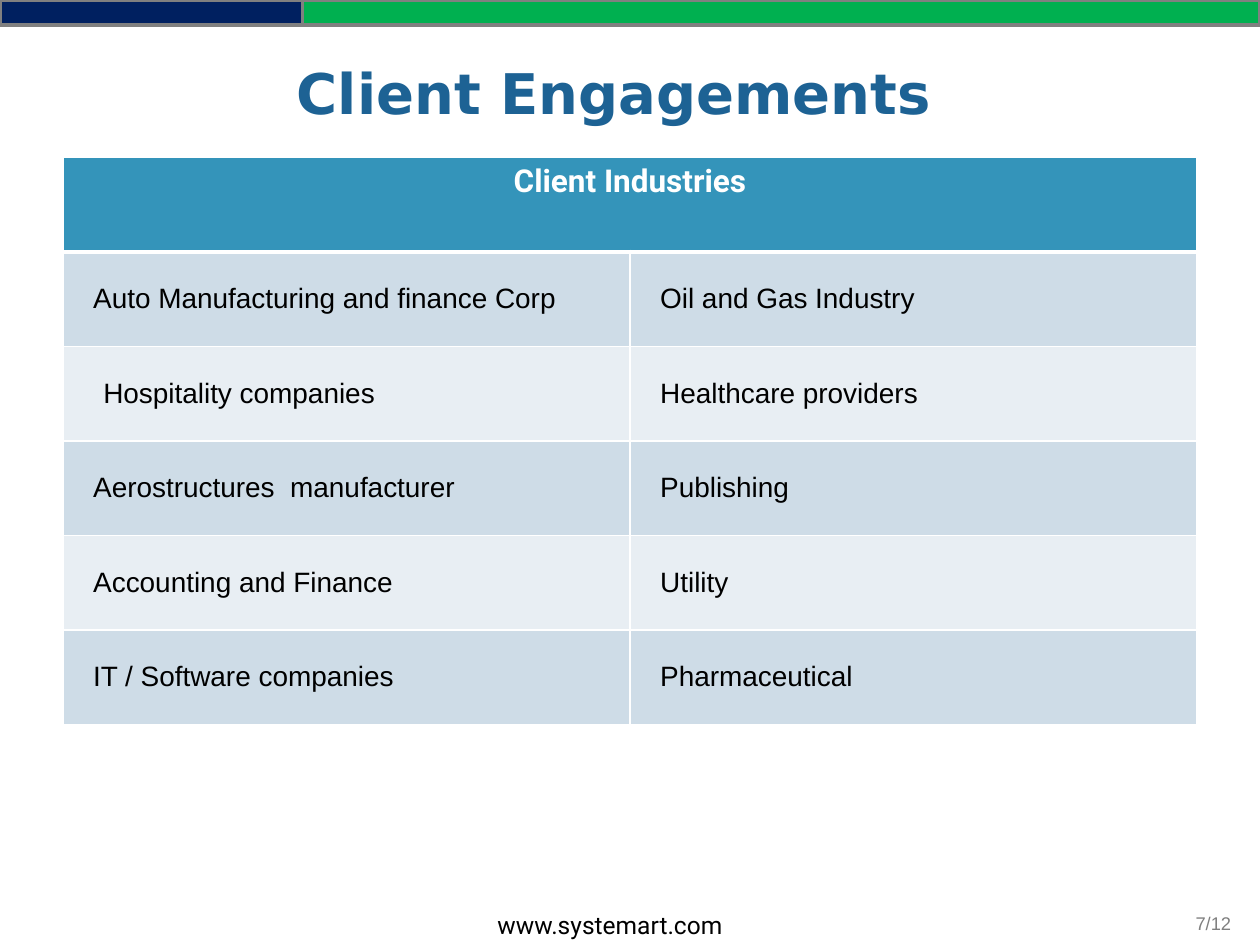
import pptx
import pptx.dml.color
import pptx.enum.shapes
import pptx.enum.text
import pptx.oxml
import pptx.oxml.ns
import pptx.util

EMU_PER_PX = 9144  # 100 px to the inch
ALIGN = pptx.enum.text.PP_ALIGN
ANCHOR = pptx.enum.text.MSO_ANCHOR

INDUSTRIES = [
    ("Auto Manufacturing and finance Corp", "Oil and Gas Industry"),
    ("Hospitality companies", "Healthcare providers"),
    ("Aerostructures  manufacturer", "Publishing"),
    ("Accounting and Finance", "Utility"),
    ("IT / Software companies", "Pharmaceutical"),
]


def px(length):
    return pptx.util.Emu(length * EMU_PER_PX)


def color(code):
    return pptx.dml.color.RGBColor.from_string(code)


class Painter:
    """Holds the style and the page being drawn."""

    body_font = "Arial"
    accent_font = "Roboto"
    title_font = "DejaVu Sans"
    header_fill = "3494BA"
    band_fills = ("CEDCE7", "E8EEF3")
    grid_line = "FFFFFF"

    def __init__(self, page):
        self.page = page

    def bar(self, width, fill):
        """Draw a strip from the top left corner of the page."""
        shape = self.page.shapes.add_shape(
            pptx.enum.shapes.MSO_SHAPE.RECTANGLE, 0, 0, px(width), px(20))
        shape.shadow.inherit = False
        shape.fill.solid()
        shape.fill.fore_color.rgb = color(fill)
        shape.line.color.rgb = color("808080")
        shape.line.width = pptx.util.Pt(2)

    def style(self, para, font, size, ink, bold=False, align=ALIGN.LEFT):
        para.alignment = align
        para.font.name = font
        para.font.size = pptx.util.Pt(size)
        para.font.bold = bold
        para.font.color.rgb = color(ink)

    def text(self, left, top, width, height, words, *style, **options):
        box = self.page.shapes.add_textbox(px(left), px(top), px(width), px(height))
        frame = box.text_frame
        frame.word_wrap = True
        frame.vertical_anchor = ANCHOR.MIDDLE
        frame.text = words
        self.style(frame.paragraphs[0], *style, **options)

    def borders(self, cell, top, bottom):
        """Add the grid lines; top and bottom are widths in points."""
        properties = cell._tc.get_or_add_tcPr()
        for side, width in (("L", 1), ("R", 1), ("T", top), ("B", bottom)):
            properties.append(pptx.oxml.parse_xml(
                f'<a:ln{side} {pptx.oxml.ns.nsdecls("a")} w="{pptx.util.Pt(width)}">'
                f'<a:solidFill><a:srgbClr val="{self.grid_line}"/></a:solidFill>'
                f'</a:ln{side}>'))

    def fill(self, cell, code):
        cell.fill.solid()
        cell.fill.fore_color.rgb = color(code)

    def body_cell(self, cell, words, indent):
        cell.vertical_anchor = ANCHOR.MIDDLE
        cell.margin_left = cell.margin_right = px(7)
        cell.margin_top = cell.margin_bottom = 0
        cell.text = words
        para = cell.text_frame.paragraphs[0]
        para._p.get_or_add_pPr().set("indent", str(px(indent)))
        self.style(para, self.body_font, 16, "000000")

    def table(self, left, top, width, row_height, heading, rows):
        count = len(rows) + 1
        table = self.page.shapes.add_table(
            count, 2, px(left), px(top), px(width), px(row_height * count)).table
        for row in table.rows:
            row.height = px(row_height)
        head = table.cell(0, 0)
        head.merge(table.cell(0, 1))
        head.text = heading
        self.style(head.text_frame.paragraphs[0], self.accent_font, 18, "FFFFFF",
                   bold=True, align=ALIGN.CENTER)
        for column in range(2):
            cell = table.cell(0, column)
            self.borders(cell, 1, 3)
            self.fill(cell, self.header_fill)
        for number, row in enumerate(rows, 1):
            for column, words in enumerate(row):
                cell = table.cell(number, column)
                self.borders(cell, 3 if number == 1 else 1, 1)
                self.fill(cell, self.band_fills[(number - 1) % 2])
                indent = 25 if words.startswith("Hospitality") else 17
                self.body_cell(cell, words, indent)


def main():
    deck = pptx.Presentation()
    deck.slide_width, deck.slide_height = px(1000), px(750)
    painter = Painter(deck.slides.add_slide(deck.slide_layouts[6]))
    painter.bar(1000, "00B050")
    painter.bar(240, "002060")
    painter.text(939, 719, 59, 28, "7/12", painter.body_font, 10.5, "808080")
    painter.text(25, 30, 925, 87, "Client Engagements", painter.title_font, 32,
                 "1D6294", bold=True, align=ALIGN.CENTER)
    painter.text(385, 717, 230, 34, "www.systemart.com", painter.accent_font, 14, "000000")
    painter.table(50, 125, 900, 75, "Client Industries", INDUSTRIES)
    deck.save("out.pptx")


if __name__ == "__main__":
    main()
